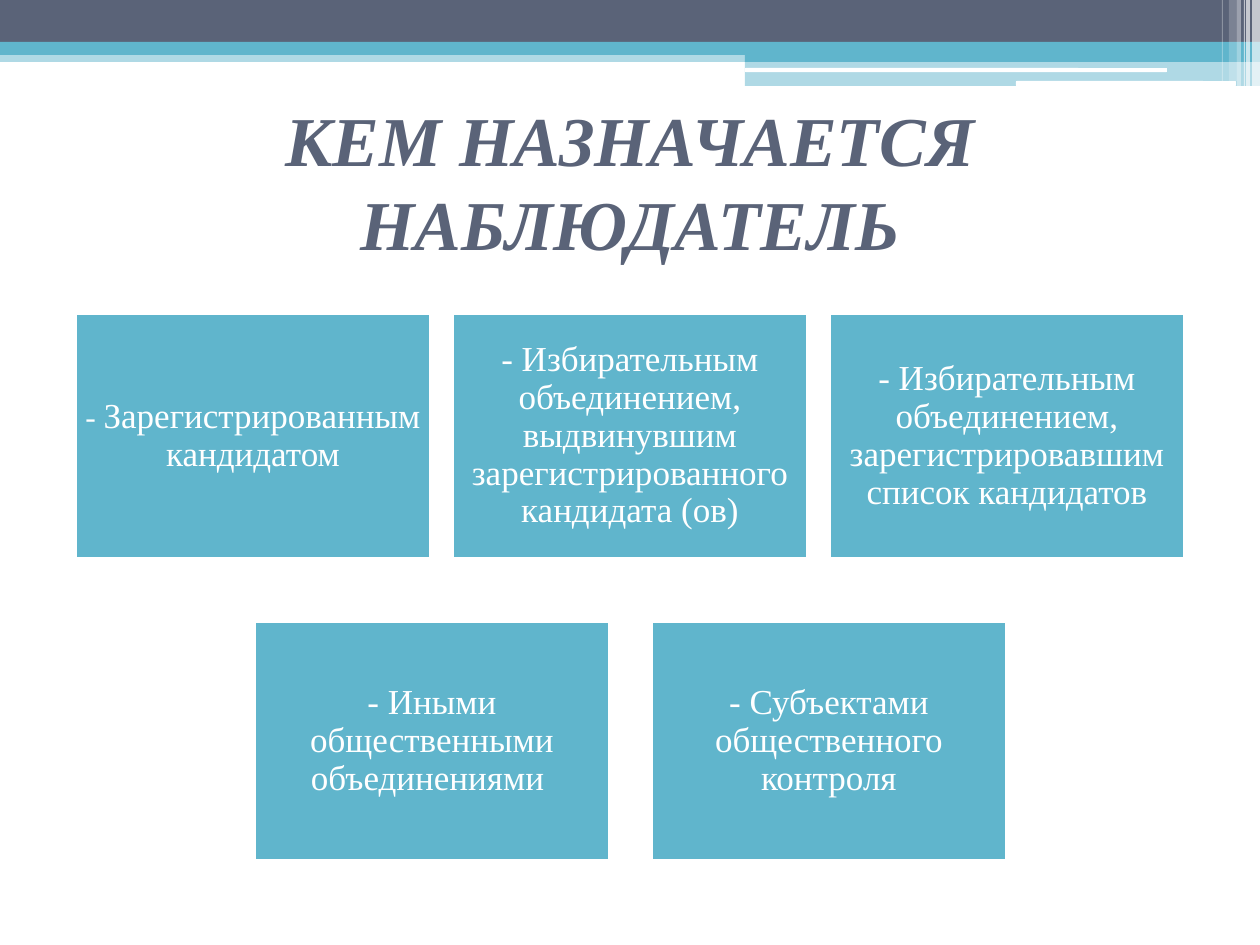
from lxml.etree import SubElement
from pptx import Presentation
from pptx.dml.color import RGBColor
from pptx.enum.shapes import MSO_SHAPE
from pptx.enum.text import MSO_ANCHOR, MSO_AUTO_SIZE, PP_ALIGN
from pptx.oxml.ns import qn
from pptx.util import Emu, Pt

SLATE, TEAL, WHITE = "5A6378", "60B5CC", "FFFFFF"

BANDS = [
    (0, 50, 1260, 12, TEAL, 50),
    (0, 0, 1260, 42, SLATE, 100),
    (0, 42, 1260, 13, TEAL, 100),
    (745, 49, 515, 13, TEAL, 100),
    (745, 61, 515, 25, TEAL, 50),
]
WHITE_BARS = [(745, 68, 422, 4), (1016, 81, 220, 5)]
STRIPES = [
    (1252, 8, 86, 65),
    (1246, 4, 86, 65),
    (1244, 1, 86, 60),
    (1237, 4, 86, 40),
    (1229, 8, 81, 20),
    (1222, 1, 81, 30),
]
CARD_ROWS = [
    (76, 314, 377, 244, [
        [("- ", 18), ("Зарегистрированным кандидатом", 20)],
        [("- Избирательным объединением, выдвинувшим зарегистрированного кандидата (ов)", 20)],
        [("- Избирательным объединением, зарегистрировавшим список кандидатов", 20)],
    ]),
    (255, 622, 397, 238, [
        [("- Иными общественными объединениями ", 20)],
        [("- Субъектами общественного контроля", 20)],
    ]),
]


def px(length):
    return Emu(round(length * 914400 / 126))


def color(value):
    return RGBColor.from_string(value)


def apply(target, values):
    for name, value in values.items():
        setattr(target, name, value)


class SlideBuilder:
    font = "Times New Roman"
    card_width = 354
    card_inset = 8

    def __init__(self, page):
        self.page = page

    def place(self, box, left, top, width, height):
        apply(box, {"left": px(left), "top": px(top), "width": px(width), "height": px(height)})

    def block(self, left, top, width, height, fill, opacity=100, kind=MSO_SHAPE.RECTANGLE):
        box = self.page.shapes.add_shape(kind, px(left), px(top), px(width), px(height))
        box.shadow.inherit = False
        box.fill.solid()
        box.fill.fore_color.rgb = color(fill)
        box.line.fill.background()
        if opacity < 100:
            tint = box.element.spPr.find(qn("a:solidFill"))[0]
            SubElement(tint, qn("a:alpha")).set("val", str(opacity * 1000))
        return box

    def add_span(self, para, text, size, fill, **extra):
        span = para.add_run()
        span.text = text
        apply(span.font, {"name": self.font, "size": Pt(size), **extra})
        span.font.color.rgb = color(fill)

    def title(self, left, top, width, height, text):
        box = self.page.shapes.title
        self.place(box, left, top, width, height)
        apply(box.text_frame, {
            "word_wrap": True,
            "auto_size": MSO_AUTO_SIZE.NONE,
            "vertical_anchor": MSO_ANCHOR.MIDDLE,
        })
        para = box.text_frame.paragraphs[0]
        para.alignment = PP_ALIGN.CENTER
        self.add_span(para, text, 40, SLATE, bold=True, italic=True)

    def card(self, left, top, height, spans):
        box = self.block(left, top, self.card_width, height, TEAL)
        box.line.color.rgb = color(WHITE)
        box.line.width = Pt(1.5)
        sides = ("left", "top", "right", "bottom")
        apply(box.text_frame, {
            "word_wrap": True,
            "vertical_anchor": MSO_ANCHOR.MIDDLE,
            **{f"margin_{side}": px(self.card_inset) for side in sides},
        })
        para = box.text_frame.paragraphs[0]
        apply(para, {"alignment": PP_ALIGN.CENTER, "line_spacing": 0.9})
        for text, size in spans:
            self.add_span(para, text, size, WHITE)


def main():
    deck = Presentation()
    apply(deck, {"slide_width": px(1260), "slide_height": px(945)})
    builder = SlideBuilder(deck.slides.add_slide(deck.slide_layouts[5]))
    for band in BANDS:
        builder.block(*band)
    for bar in WHITE_BARS:
        builder.block(*bar, WHITE, kind=MSO_SHAPE.ROUNDED_RECTANGLE)
    for left, width, height, opacity in STRIPES:
        builder.block(left, 0, width, height, WHITE, opacity)
    builder.title(63, 106, 1134, 149, "КЕМ НАЗНАЧАЕТСЯ НАБЛЮДАТЕЛЬ")
    for left, top, pitch, height, cards in CARD_ROWS:
        for column, spans in enumerate(cards):
            builder.card(left + column * pitch, top, height, spans)
    deck.save("out.pptx")


if __name__ == "__main__":
    main()
